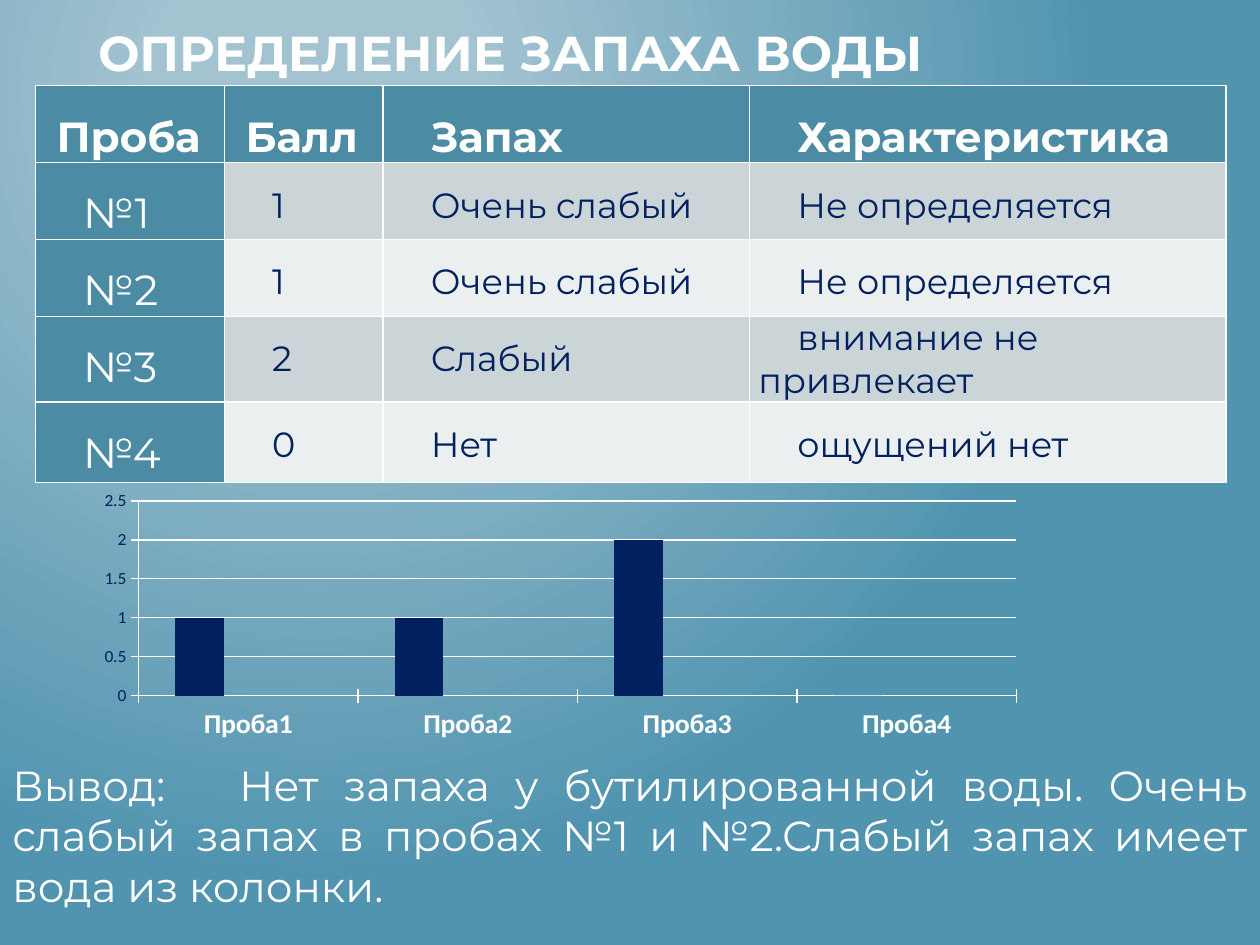
import pptx
import pptx.util
import pptx.dml.color
import pptx.chart.data
import pptx.enum.chart
import pptx.enum.text
import pptx.oxml
import pptx.oxml.ns
from lxml import etree

WHITE, NAVY, TEAL = "FFFFFF", "002060", "4C8BA4"
FACE = "Montserrat"
Pt = pptx.util.Pt
Align = pptx.enum.text.PP_ALIGN
qn = pptx.oxml.ns.qn

deck = pptx.Presentation()
deck.slide_width, deck.slide_height = pptx.util.Inches(10), pptx.util.Inches(7.5)
W, H = deck.slide_width, deck.slide_height


def box(left, top, wide, high):
    return [round(side * part / 100) for side, part in zip((W, H, W, H), (left, top, wide, high))]


def style(font, size, color, bold=False, face=FACE):
    font.size, font.bold, font.name = Pt(size), bold, face
    font.color.rgb = pptx.dml.color.RGBColor.from_string(color)


slide = deck.slides.add_slide(deck.slide_layouts[5])
back = slide.background.fill
back.gradient()
for stop, (place, color) in zip(back.gradient_stops, ((0.2, "A3C3D1"), (1, "5194AF"))):
    stop.position = place
    stop.color.rgb = pptx.dml.color.RGBColor.from_string(color)
grad = slide.element.find(".//" + qn("a:gradFill"))
grad.remove(grad.find(qn("a:lin")))
ring = etree.SubElement(grad, qn("a:path"), {"path": "circle"})
etree.SubElement(ring, qn("a:fillToRect"), l="50000", t="20000", r="100000", b="100000")

title = slide.shapes.title
title.left, title.top, title.width, title.height = box(5.9, 1.7, 90.6, 16.8)
frame = title.text_frame
frame.text = "ОПРЕДЕЛЕНИЕ ЗАПАХА ВОДЫ"
frame.vertical_anchor = pptx.enum.text.MSO_ANCHOR.TOP
frame.margin_left = round(W * 0.019)
frame.paragraphs[0].alignment = Align.LEFT
style(frame.paragraphs[0].font, 28, WHITE, True)

rows = [
    ["Проба", "Балл", "Запах", "Характеристика"],
    ["№1", "1", "Очень слабый", "Не определяется"],
    ["№2", "1", "Очень слабый", "Не определяется"],
    ["№3", "2", "Слабый", "внимание не привлекает"],
    ["№4", "0", "Нет", "ощущений нет"],
]
table = slide.shapes.add_table(5, 4, *box(2.8, 9.07, 94.5, 39.87)).table
for col, share in zip(table.columns, (15, 12.6, 29.1, 37.8)):
    col.width = round(W * share / 100)
for row, share in zip(table.rows, (7.6, 7.6, 7.6, 8.53, 8.53)):
    row.height = round(H * share / 100)
for r, row in enumerate(rows):
    for c, word in enumerate(row):
        cell = table.cell(r, c)
        cell.text = word
        cell.margin_left = cell.margin_right = round(W * 0.007)
        cell.margin_top = cell.margin_bottom = 0
        para = cell.text_frame.paragraphs[0]
        long = word == "внимание не привлекает"
        para.alignment = Align.LEFT if long else Align.JUSTIFY
        para.line_spacing = 1.0 if long else 1.5
        inset = 0.01 if r == 0 and c < 2 else 0.031
        para._p.get_or_add_pPr().set("indent", str(round(W * inset)))
        head = r == 0 or c == 0
        style(para.font, 24 if head else 20, WHITE if head else NAVY, r == 0)
        props = cell._tc.get_or_add_tcPr()
        for side in ("lnL", "lnR", "lnT", "lnB"):
            line = etree.SubElement(props, qn("a:" + side), w=str(Pt(1)))
            ink = etree.SubElement(line, qn("a:solidFill"))
            etree.SubElement(ink, qn("a:srgbClr"), val=WHITE)
        cell.fill.solid()
        shade = TEAL if head else ("ECEFEF", "CBD5D7")[r % 2]
        cell.fill.fore_color.rgb = pptx.dml.color.RGBColor.from_string(shade)

data = pptx.chart.data.CategoryChartData()
data.categories = ["Проба1", "Проба2", "Проба3", "Проба4"]
data.add_series("Series 1", (1, 1, 2, 0))
for name in ("Series 2", "Series 3"):
    data.add_series(name, (None,) * 4)
kind = pptx.enum.chart.XL_CHART_TYPE.COLUMN_CLUSTERED
chart = slide.shapes.add_chart(kind, *box(8.3, 50, 79.5, 28.4), data).chart
chart.has_legend = chart.has_title = False
style(chart.font, 10, WHITE, face="Calibri")
plot = chart.plots[0]
plot.gap_width, plot.overlap, plot.vary_by_categories = 150, 0, False
for series, color in zip(plot.series, (NAVY, "DB8631", "E3CC5A")):
    series.format.fill.solid()
    series.format.fill.fore_color.rgb = pptx.dml.color.RGBColor.from_string(color)
cat, val = chart.category_axis, chart.value_axis
style(cat.tick_labels.font, 16, WHITE, True, "Calibri")
style(val.tick_labels.font, 10, NAVY, face="Calibri")
val.minimum_scale, val.maximum_scale, val.major_unit = 0, 2.5, 0.5
val.has_major_gridlines = True
for axis in (cat, val):
    axis.major_tick_mark = pptx.enum.chart.XL_TICK_MARK.CROSS
for part in (cat, val, val.major_gridlines):
    part.format.line.width = Pt(0.75)
    part.format.line.color.rgb = pptx.dml.color.RGBColor.from_string(WHITE)
area = chart._chartSpace.find(".//" + qn("c:plotArea"))
for old in area.findall(qn("c:layout")):
    area.remove(old)
layout = etree.Element(qn("c:layout"))
area.insert(0, layout)
manual = etree.SubElement(layout, qn("c:manualLayout"))
for tag, value in (("layoutTarget", "inner"), ("xMode", "edge"), ("yMode", "edge"),
                   ("x", "0.03"), ("y", "0.11"), ("w", "0.88"), ("h", "0.75")):
    etree.SubElement(manual, qn("c:" + tag), val=value)

note = slide.shapes.add_textbox(*box(0, 79.6, 100, 17.5)).text_frame
note.word_wrap = True
note.auto_size = pptx.enum.text.MSO_AUTO_SIZE.SHAPE_TO_FIT_TEXT
note.vertical_anchor = pptx.enum.text.MSO_ANCHOR.MIDDLE
note.text = ("Вывод:\tНет запаха у бутилированной воды. Очень слабый запах "
             "в пробах №1 и №2.Слабый запах имеет вода из колонки.")
para = note.paragraphs[0]
para.alignment = Align.JUSTIFY
tabs = etree.SubElement(para._p.get_or_add_pPr(), qn("a:tabLst"))
etree.SubElement(tabs, qn("a:tab"), pos=str(round(W * 0.18)), algn="l")
style(para.font, 24, WHITE)

deck.save("out.pptx")
